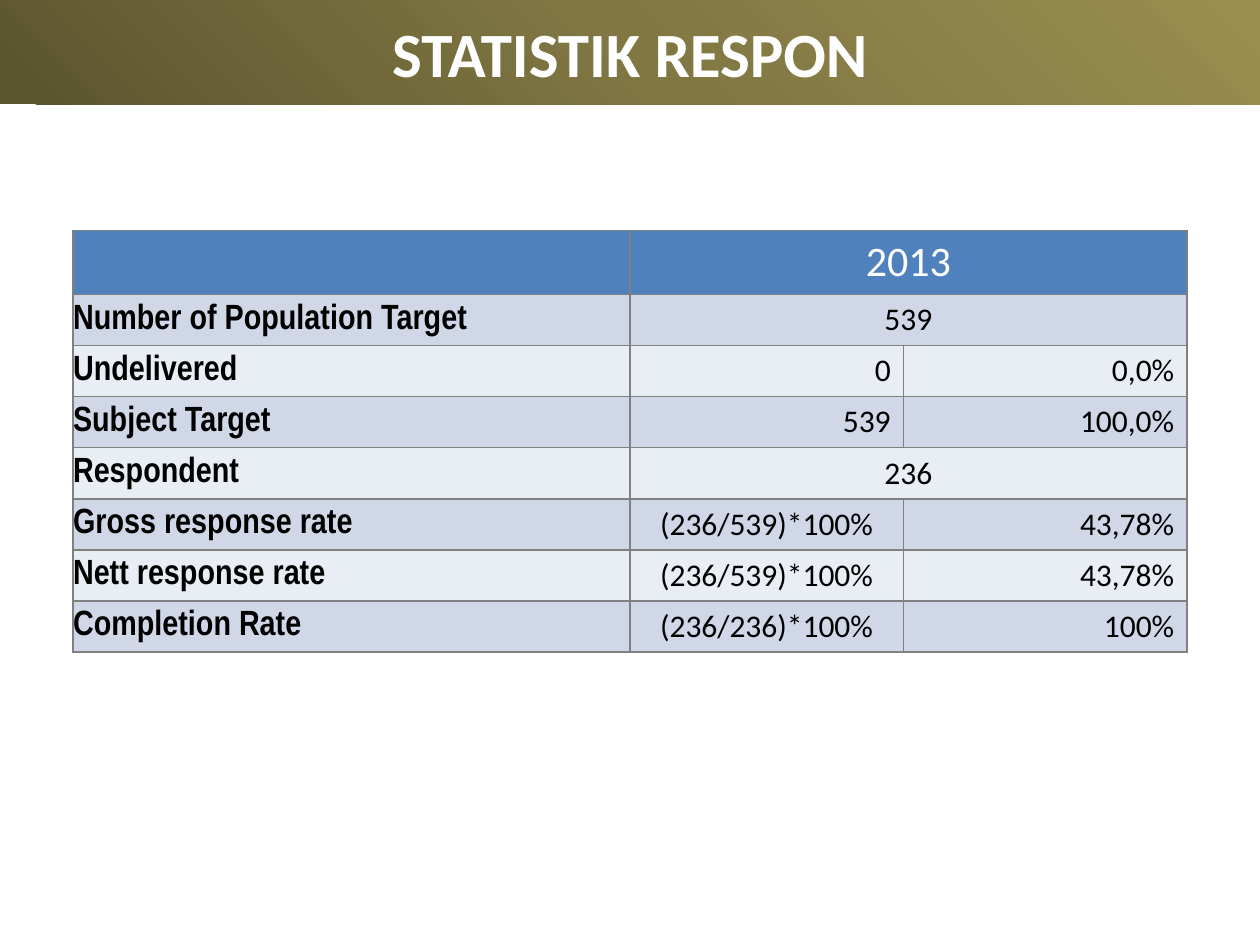
import copy

import pptx
import pptx.dml.color
import pptx.enum.shapes
import pptx.enum.text
import pptx.oxml
import pptx.oxml.ns
import pptx.util
from pptx.util import Inches

COLORS = {
    "white": "FFFFFF", "black": "000000", "header": "4F81BD", "border": "808080",
    "odd": "D0D8E8", "even": "E9EDF4",
}
BANNER_STOPS = [(0, "5A542F"), (0.5, "817743"), (1, "998D4F")]
ALIGN = pptx.enum.text.PP_ALIGN
MIDDLE = pptx.enum.text.MSO_ANCHOR.MIDDLE


def rgb(value):
    return pptx.dml.color.RGBColor.from_string(value)


def write(tf, text, font, size, color, align, bold=False):
    p = tf.paragraphs[0]
    p.text = text
    p.alignment = align
    p.font.name = font
    p.font.size = pptx.util.Pt(size)
    p.font.bold = bold
    p.font.color.rgb = rgb(COLORS[color])


prs = pptx.Presentation()
prs.slide_width, prs.slide_height = Inches(10), Inches(7.5)
s = prs.slides.add_slide(prs.slide_layouts[6])

# Response table: label, then one merged value or a value with its percentage
rows = [
    ("", "2013"),
    ("Number of Population Target", "539"),
    ("Undelivered", "0", "0,0%"),
    ("Subject Target", "539", "100,0%"),
    ("Respondent", "236"),
    ("Gross response rate", "(236/539)*100%", "43,78%"),
    ("Nett response rate", "(236/539)*100%", "43,78%"),
    ("Completion Rate", "(236/236)*100%", "100%"),
]
widths = [4.42, 2.17, 2.25]
row_heights = [0.5] + [0.4] * (len(rows) - 1)
table = s.shapes.add_table(len(rows), len(widths), Inches(0.58), Inches(1.83),
                           Inches(sum(widths)), Inches(sum(row_heights))).table
for column, width in zip(table.columns, widths):
    column.width = Inches(width)
for row, height in zip(table.rows, row_heights):
    row.height = Inches(height)

for i, values in enumerate(rows):
    fill = "header" if i == 0 else "odd" if i % 2 else "even"
    for cell in table.rows[i].cells:
        tcPr = cell._tc.get_or_add_tcPr()
        for side in ("lnL", "lnR", "lnT", "lnB"):
            tcPr.append(pptx.oxml.parse_xml(
                f'<a:{side} {pptx.oxml.ns.nsdecls("a")} w="12700"><a:solidFill>'
                f'<a:srgbClr val="{COLORS["border"]}"/></a:solidFill></a:{side}>'))
        cell.fill.solid()
        cell.fill.fore_color.rgb = rgb(COLORS[fill])

    merged = len(values) == 2
    if merged:
        table.cell(i, 1).merge(table.cell(i, 2))
        table.cell(i, 1).vertical_anchor = MIDDLE
    for j, text in enumerate(values):
        cell = table.cell(i, j)
        if not text:
            continue
        if j == 0:
            cell.vertical_anchor = MIDDLE
            cell.margin_left = cell.margin_right = cell.margin_top = cell.margin_bottom = 0
            write(cell.text_frame, text, "Arial Narrow", 20, "black", ALIGN.LEFT, bold=True)
        elif i == 0:
            write(cell.text_frame, text, "Calibri", 24, "white", ALIGN.CENTER)
        else:
            centred = merged or text.startswith("(")
            write(cell.text_frame, text, "Calibri", 18, "black",
                  ALIGN.CENTER if centred else ALIGN.RIGHT)

# Title banner with a three-stop gradient
banner = s.shapes.add_shape(pptx.enum.shapes.MSO_SHAPE.RECTANGLE,
                            0, 0, Inches(10), Inches(0.83))
banner.shadow.inherit = False
banner.line.fill.background()
banner.fill.gradient()
banner.fill.gradient_angle = 45
gsLst = banner._element.spPr.find(".//" + pptx.oxml.ns.qn("a:gsLst"))
gsLst.append(copy.deepcopy(gsLst[-1]))
for stop, (position, color) in zip(banner.fill.gradient_stops, BANNER_STOPS):
    stop.position = position
    stop.color.rgb = rgb(color)
tf = banner.text_frame
tf.word_wrap = True
tf.vertical_anchor = MIDDLE
write(tf, "STATISTIK RESPON", "Calibri", 36, "white", ALIGN.CENTER, bold=True)

prs.save("out.pptx")
